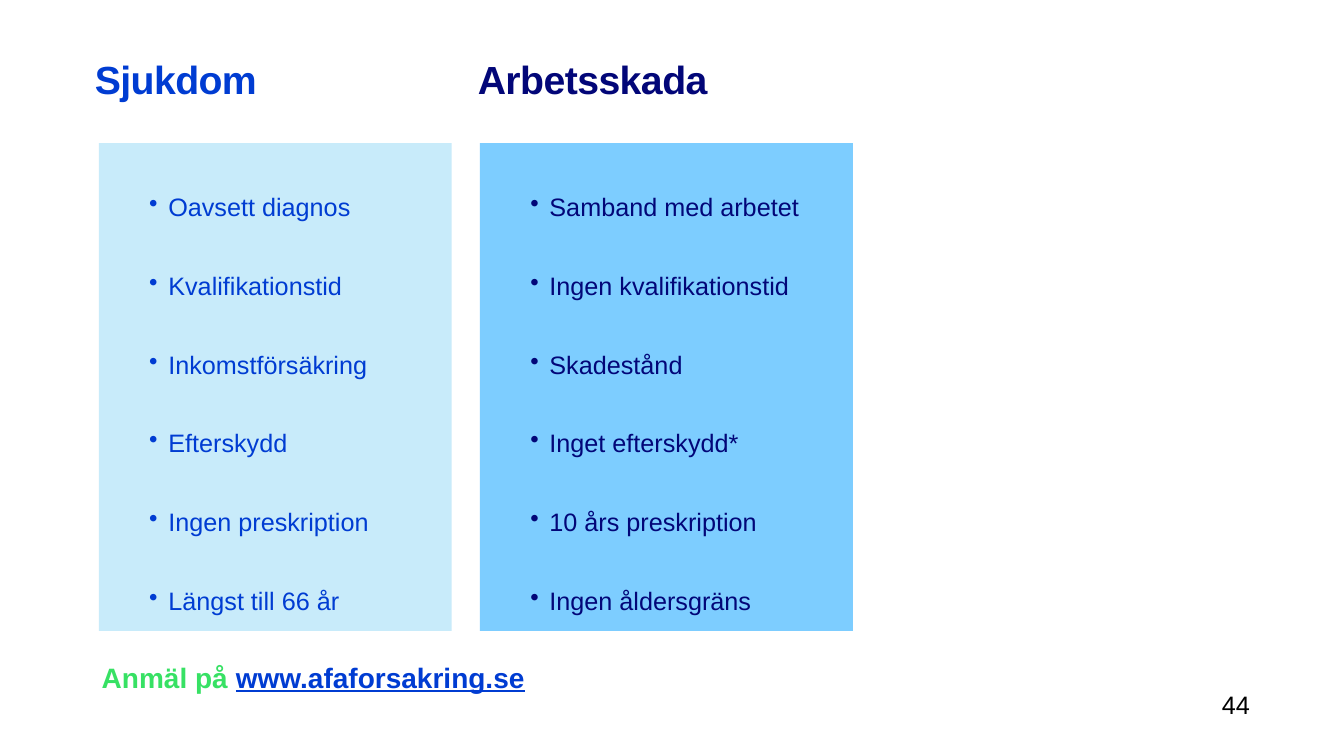
import pptx
import pptx.dml.color
import pptx.enum.shapes
import pptx.enum.text
import pptx.oxml.ns
import pptx.util
from lxml import etree
from pptx.util import Inches

RGBColor = pptx.dml.color.RGBColor
BLUE = RGBColor(0x00, 0x3C, 0xD2)
NAVY = RGBColor(0x02, 0x06, 0x78)
GREEN = RGBColor(0x37, 0xE1, 0x64)
BLACK = RGBColor(0x00, 0x00, 0x00)
PALE_BLUE = RGBColor(0xC8, 0xEB, 0xFA)
SKY_BLUE = RGBColor(0x7D, 0xCD, 0xFF)

SICKNESS = ["Oavsett diagnos", "Kvalifikationstid", "Inkomstförsäkring",
            "Efterskydd", "Ingen preskription", "Längst till 66 år"]
WORK_INJURY = ["Samband med arbetet", "Ingen kvalifikationstid", "Skadestånd",
               "Inget efterskydd*", "10 års preskription", "Ingen åldersgräns"]


def add_text(paragraph, text, color, size=18, bold=False, underline=False,
             tracking=None):
    """Append a run; tracking is in points."""
    run = paragraph.add_run()
    run.text = text
    font = run.font
    font.name = "Arial"
    font.size = pptx.util.Pt(size)
    font.bold = bold
    font.underline = underline
    font.color.rgb = color
    if tracking is not None:
        run._r.get_or_add_rPr().set("spc", str(round(tracking * 100)))


def add_bullet(paragraph):
    properties = paragraph._p.get_or_add_pPr()
    properties.set("marL", str(Inches(0.69)))
    properties.set("indent", str(Inches(-0.19)))
    bullet = etree.SubElement(properties, pptx.oxml.ns.qn("a:buChar"))
    bullet.set("char", "•")


def add_panel(slide, left, width, fill, color, items):
    panel = slide.shapes.add_shape(
        pptx.enum.shapes.MSO_SHAPE.RECTANGLE,
        Inches(left), Inches(1.42), Inches(width), Inches(4.84))
    panel.shadow.inherit = False
    panel.fill.solid()
    panel.fill.fore_color.rgb = fill
    panel.line.fill.background()
    frame = panel.text_frame
    frame.word_wrap = True
    frame.vertical_anchor = pptx.enum.text.MSO_ANCHOR.TOP
    frame.margin_left = frame.margin_right = frame.margin_bottom = 0
    frame.margin_top = Inches(0.03)
    for index, item in enumerate(items):
        paragraph = frame.add_paragraph() if index else frame.paragraphs[0]
        paragraph.level = 1
        paragraph.alignment = pptx.enum.text.PP_ALIGN.LEFT
        paragraph.line_spacing = 2.5
        paragraph.space_after = pptx.util.Pt(2.25)
        add_bullet(paragraph)
        add_text(paragraph, item, color)


def add_label(slide, left, top, width, height):
    """Add an empty text box and return its first paragraph."""
    label = slide.shapes.add_textbox(
        Inches(left), Inches(top), Inches(width), Inches(height))
    label.text_frame.word_wrap = True
    return label.text_frame.paragraphs[0]


def format_heading(heading, left, text, color):
    heading.left, heading.top = Inches(left), Inches(0.46)
    heading.width, heading.height = Inches(2.95), Inches(0.96)
    frame = heading.text_frame
    frame.word_wrap = True
    frame.auto_size = pptx.enum.text.MSO_AUTO_SIZE.NONE
    frame.vertical_anchor = pptx.enum.text.MSO_ANCHOR.TOP
    frame.margin_top = Inches(0.09)
    paragraph = frame.paragraphs[0]
    paragraph.alignment = pptx.enum.text.PP_ALIGN.LEFT
    add_text(paragraph, text, color, size=28, bold=True, tracking=-0.4)


def main():
    presentation = pptx.Presentation()
    presentation.slide_width = Inches(13.33)
    presentation.slide_height = Inches(7.5)
    slide = presentation.slides.add_slide(presentation.slide_layouts[5])

    add_panel(slide, 0.98, 3.5, PALE_BLUE, BLUE, SICKNESS)
    add_panel(slide, 4.76, 3.7, SKY_BLUE, NAVY, WORK_INJURY)

    format_heading(slide.shapes.title, 0.84, "Sjukdom", BLUE)
    second_heading = slide.shapes.add_textbox(0, 0, 0, 0)
    format_heading(second_heading, 4.64, "Arbetsskada", NAVY)

    report = add_label(slide, 0.91, 6.5, 7.48, 0.44)
    add_text(report, "Anmäl på ", GREEN, size=20, bold=True)
    add_text(report, "www.afaforsakring.se", BLUE, size=20, bold=True,
             underline=True)

    page_number = add_label(slide, 12.02, 6.79, 0.75, 0.2)
    add_text(page_number, "44", BLACK)

    presentation.save("out.pptx")


if __name__ == "__main__":
    main()
